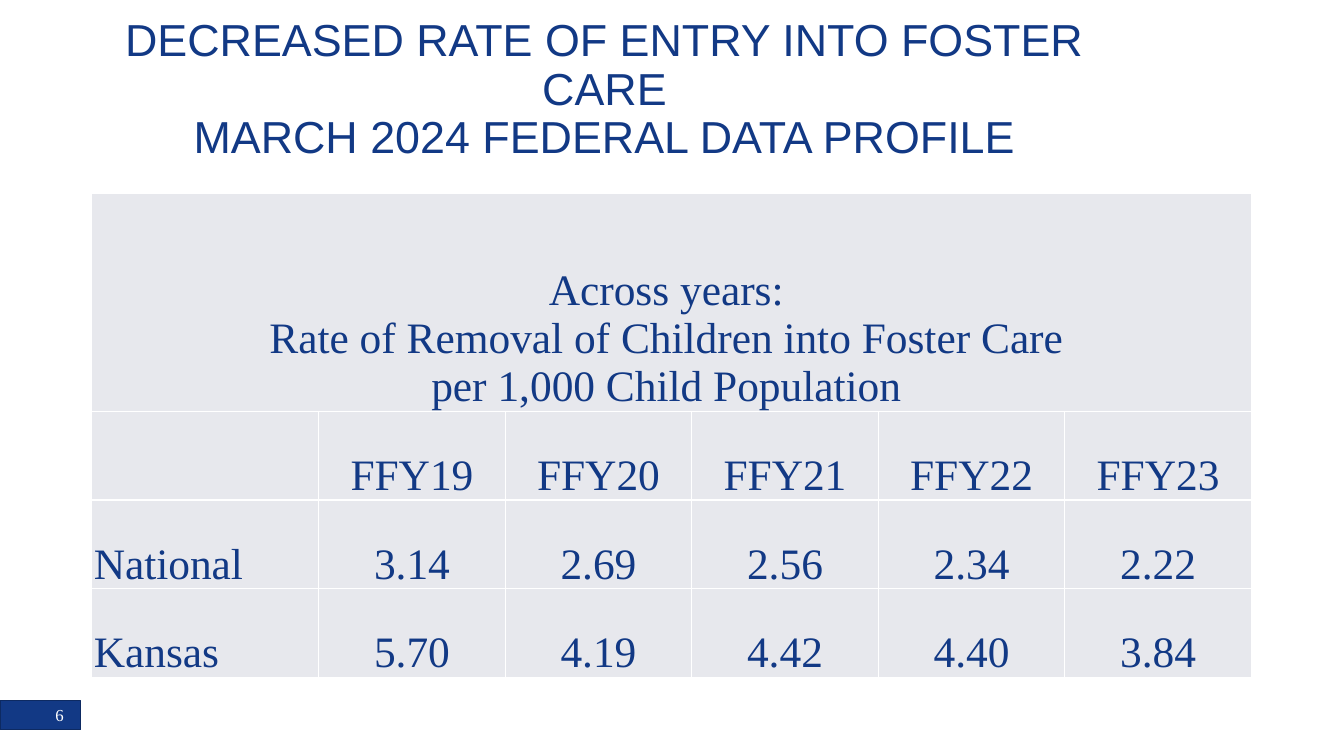
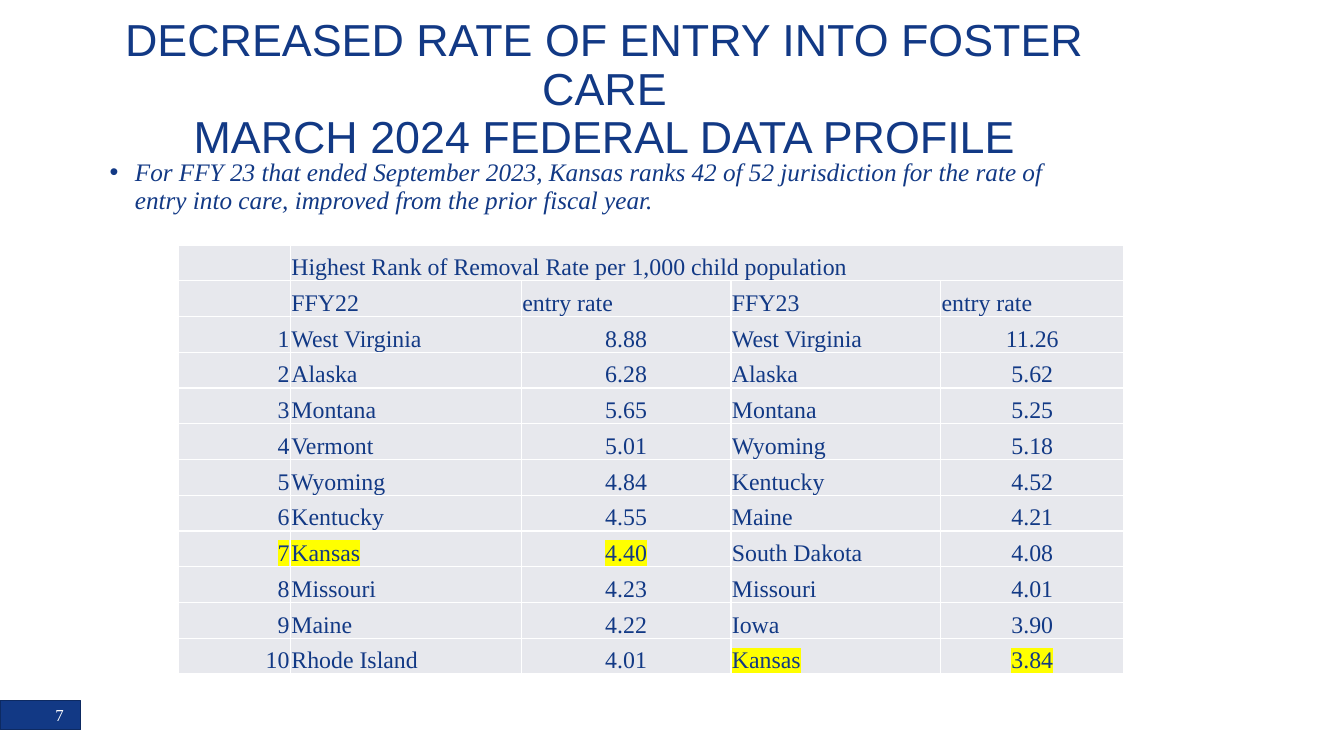
import pptx
import pptx.dml.color
import pptx.enum.shapes
import pptx.enum.text
import pptx.oxml
import pptx.oxml.ns
import pptx.util
from lxml import etree

BLUE, EDGE, GREY, WHITE, YELLOW = "123985", "0D2A62", "E7E8ED", "FFFFFF", "FFFF00"
SANS, SERIF = "Arial", "Times New Roman"
WIDTH, HEIGHT = pptx.util.Inches(13.33), pptx.util.Inches(7.5)
TITLE = ["DECREASED RATE OF ENTRY INTO FOSTER CARE", "MARCH 2024 FEDERAL DATA PROFILE"]
ALIGN = {
    "l": pptx.enum.text.PP_ALIGN.LEFT,
    "c": pptx.enum.text.PP_ALIGN.CENTER,
    "r": pptx.enum.text.PP_ALIGN.RIGHT,
}
MIDDLE = pptx.enum.text.MSO_ANCHOR.MIDDLE
HEADER_ROWS = 2

RATES = [
    ["Across years: \nRate of Removal of Children into Foster Care \nper 1,000 Child Population "],
    ["", "FFY19", "FFY20", "FFY21", "FFY22", "FFY23"],
    ["National", "3.14", "2.69", "2.56", "2.34", "2.22"],
    ["Kansas", "5.70", "4.19", "4.42", "4.40", "3.84"],
]
RANKED = [
    ("West Virginia", "8.88", "West Virginia", "11.26"),
    ("Alaska", "6.28", "Alaska", "5.62"),
    ("Montana", "5.65", "Montana", "5.25"),
    ("Vermont", "5.01", "Wyoming", "5.18"),
    ("Wyoming", "4.84", "Kentucky", "4.52"),
    ("Kentucky", "4.55", "Maine", "4.21"),
    ("Kansas", "4.40", "South Dakota", "4.08"),
    ("Missouri", "4.23", "Missouri", "4.01"),
    ("Maine", "4.22", "Iowa", "3.90"),
    ("Rhode Island", "4.01", "Kansas", "3.84"),
]
RANKS = [
    ["", "Highest Rank of Removal Rate per 1,000 child population"],
    ["", "FFY22", "entry rate", "FFY23", "entry rate"],
] + [[str(rank), *row] for rank, row in enumerate(RANKED, 1)]
KANSAS_CELLS = {(8, 0), (8, 1), (8, 2), (11, 3), (11, 4)}


def rgb(value):
    return pptx.dml.color.RGBColor.from_string(value)


def across(percent):
    return round(WIDTH * percent / 100)


def down(percent):
    return round(HEIGHT * percent / 100)


def area(left, top, width, height):
    """Turn percentages of the slide into a position and size."""
    return across(left), down(top), across(width), down(height)


def add_run(p, text, size, color=BLUE, font=SERIF, italic=False, highlight=None):
    r = p.add_run()
    r.text = text
    r.font.size = pptx.util.Pt(size)
    r.font.italic = italic or None
    r.font.color.rgb = rgb(color)
    if highlight:
        mark = etree.SubElement(r.font._element, pptx.oxml.ns.qn("a:highlight"))
        etree.SubElement(mark, pptx.oxml.ns.qn("a:srgbClr"), val=highlight)
    r.font.name = font


def add_title(slide):
    sp = slide.shapes.title
    sp.left, sp.top, sp.width, sp.height = area(3.68, 5.73, 82.6, 12.53)
    tf = sp.text_frame
    tf.word_wrap, tf.vertical_anchor = True, MIDDLE
    tf.auto_size = pptx.enum.text.MSO_AUTO_SIZE.NONE
    p = tf.paragraphs[0]
    p.alignment, p.line_spacing = ALIGN["c"], 0.9
    for i, line in enumerate(TITLE):
        if i:
            p.add_line_break()
        add_run(p, line, 32, font=SANS)


def add_page_number(slide, number):
    band = slide.shapes.add_shape(
        pptx.enum.shapes.MSO_SHAPE.RECTANGLE, *area(0, 92.67, 6, 3.87))
    band.shadow.inherit = False
    band.fill.solid()
    band.fill.fore_color.rgb = rgb(BLUE)
    band.line.color.rgb = rgb(EDGE)
    band.line.width = pptx.util.Pt(0.85)
    tf = slide.shapes.add_textbox(*area(1.73, 92.67, 3.75, 3.87)).text_frame
    tf.word_wrap, tf.vertical_anchor = True, MIDDLE
    p = tf.paragraphs[0]
    p.alignment = ALIGN["r"]
    add_run(p, str(number), 12, WHITE)


def add_bullet(slide, text):
    tf = slide.shapes.add_textbox(*area(5.55, 20.53, 76.97, 8.67)).text_frame
    tf.word_wrap = True
    p = tf.paragraphs[0]
    p.line_spacing, p.space_after = 0.9, pptx.util.Pt(6)
    pPr = p._p.get_or_add_pPr()
    pPr.set("marL", str(pptx.util.Inches(0.5)))
    pPr.set("indent", str(pptx.util.Inches(-0.25)))
    etree.SubElement(pPr, pptx.oxml.ns.qn("a:buFont"), typeface=SANS)
    etree.SubElement(pPr, pptx.oxml.ns.qn("a:buChar"), char="•")
    add_run(p, text, 18, italic=True)


def style_cell(cell, inset):
    cell.margin_left = cell.margin_right = cell.margin_top = pptx.util.Inches(inset)
    cell.margin_bottom = 0
    cell.vertical_anchor = pptx.enum.text.MSO_ANCHOR.BOTTOM
    tcPr = cell._tc.get_or_add_tcPr()
    for side in "LRTB":
        ln = etree.SubElement(
            tcPr, pptx.oxml.ns.qn("a:ln" + side), w=str(pptx.util.Pt(1)))
        fill = etree.SubElement(ln, pptx.oxml.ns.qn("a:solidFill"))
        etree.SubElement(fill, pptx.oxml.ns.qn("a:srgbClr"), val=WHITE)
    cell.fill.solid()
    cell.fill.fore_color.rgb = rgb(GREY)


def add_table(slide, rows, left, top, widths, heights, size, inset,
              header_align, aligns, merge_from, marked=()):
    """Draw rows; the first row is merged from column merge_from to its end."""
    frame = slide.shapes.add_table(
        len(rows), len(widths), *area(left, top, sum(widths), sum(heights)))
    table = frame.table
    table.first_row = table.horz_banding = False
    for column, width in zip(table.columns, widths):
        column.width = across(width)
    for row, height in zip(table.rows, heights):
        row.height = down(height)
    for cell in table.iter_cells():
        style_cell(cell, inset)
    table.cell(0, merge_from).merge(table.cell(0, len(widths) - 1))
    for i, row in enumerate(rows):
        for j, text in enumerate(row):
            if not text:
                continue
            tf = table.cell(i, j).text_frame
            for k, line in enumerate(text.split("\n")):
                p = tf.add_paragraph() if k else tf.paragraphs[0]
                p.alignment = ALIGN[header_align if i < HEADER_ROWS else aligns[j]]
                add_run(p, line, size, highlight=YELLOW if (i, j) in marked else None)


def add_slide(prs, number):
    slide = prs.slides.add_slide(prs.slide_layouts[5])
    add_title(slide)
    add_page_number(slide, number)
    return slide


def main():
    prs = pptx.Presentation()
    prs.slide_width, prs.slide_height = WIDTH, HEIGHT

    slide = add_slide(prs, 6)
    add_table(slide, RATES, 6.83, 25.6, [16.88] + [13.88] * 5, [28.8] + [11.73] * 3,
              size=31, inset=0.02, header_align="c", aligns="lccccc", merge_from=0)

    slide = add_slide(prs, 7)
    add_bullet(slide, "For FFY 23 that ended September 2023, Kansas ranks 42 of 52 "
                      "jurisdiction for the rate of entry into care, improved from "
                      "the prior fiscal year.")
    add_table(slide, RANKS, 13.28, 32.4, [8.33, 17.18, 15.6, 15.6, 13.65],
              [4.73] * len(RANKS), size=17, inset=0.01, header_align="l",
              aligns="rlclc", merge_from=1, marked=KANSAS_CELLS)

    prs.save("out.pptx")


if __name__ == "__main__":
    main()
